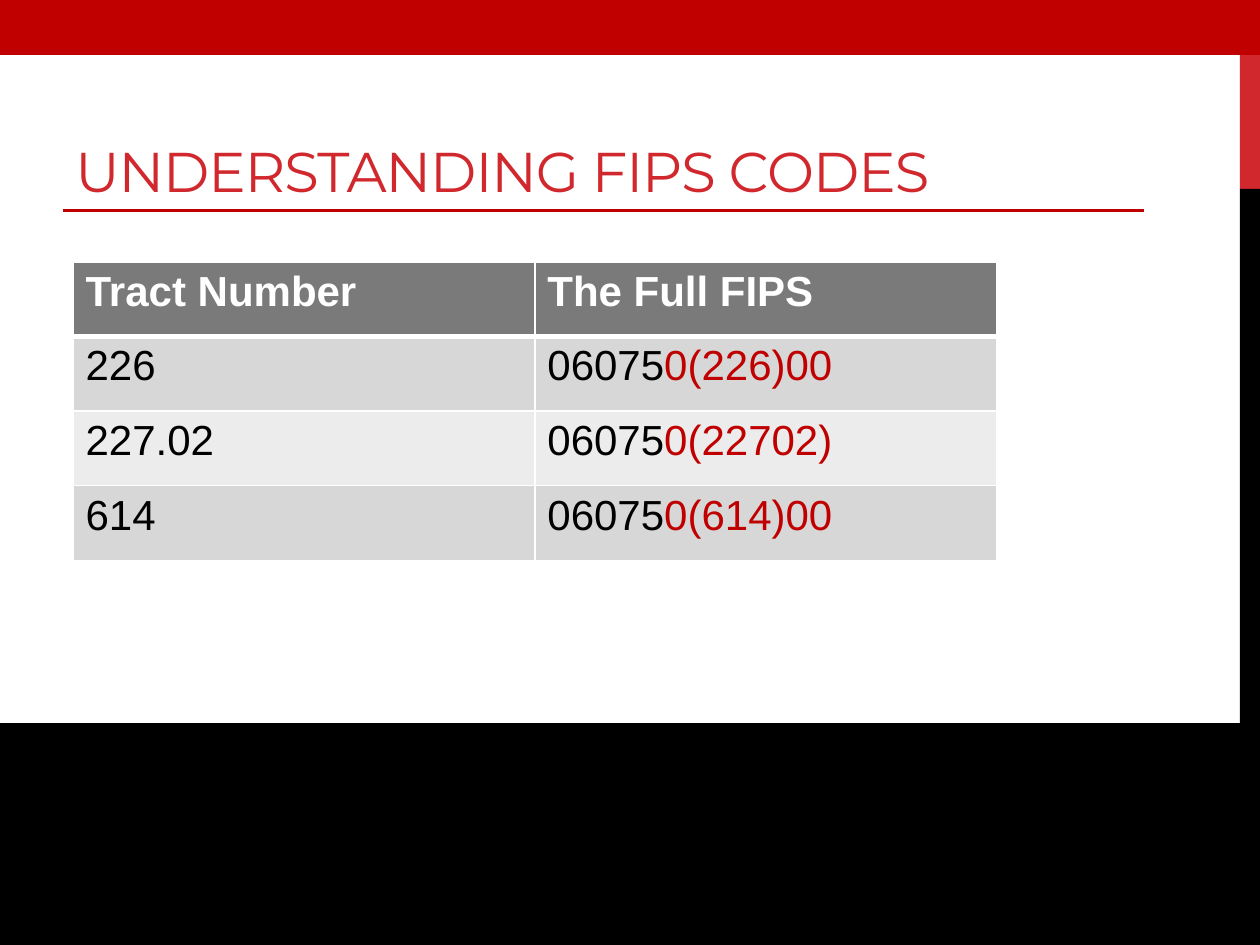
from lxml import etree
from pptx import Presentation
from pptx.dml.color import RGBColor
from pptx.enum.shapes import MSO_CONNECTOR, MSO_SHAPE
from pptx.enum.text import MSO_ANCHOR
from pptx.oxml.ns import qn
from pptx.util import Inches, Pt

RECTANGLE = MSO_SHAPE.RECTANGLE
STRAIGHT = MSO_CONNECTOR.STRAIGHT
BOTTOM = MSO_ANCHOR.BOTTOM

WHITE, BLACK, RED, DARK_RED = "FFFFFF", "000000", "D1282E", "C00000"
HEADER_GRAY, BAND_DARK, BAND_LIGHT = "7A7A7A", "D7D7D7", "ECECEC"


def color(hex_string):
    return RGBColor.from_string(hex_string)


def add_run(paragraph, text, font_name, size, hex_string, bold=False):
    run = paragraph.add_run()
    run.text = text
    run.font.name = font_name
    run.font.size = Pt(size)
    run.font.bold = bold
    run.font.color.rgb = color(hex_string)
    return run


presentation = Presentation()
WIDTH, HEIGHT = 10, 7.5
presentation.slide_width = Inches(WIDTH)
presentation.slide_height = Inches(HEIGHT)
slide = presentation.slides.add_slide(presentation.slide_layouts[6])

# Side strips, bottom panel and top band: left, top, width, height, fill, outline
STRIP = 0.16
strip_left, strip_split, panel_top = WIDTH - STRIP, HEIGHT / 5, 5.75
bars = [
    (strip_left, 0, STRIP, strip_split, RED, False),
    (strip_left, strip_split, STRIP, HEIGHT - strip_split, BLACK, False),
    (0, panel_top, WIDTH, HEIGHT - panel_top, BLACK, True),
    (0, 0, WIDTH, 0.42, DARK_RED, True),
]
for left, top, width, height, fill, outlined in bars:
    bar = slide.shapes.add_shape(
        RECTANGLE, Inches(left), Inches(top), Inches(width), Inches(height))
    bar.shadow.inherit = False
    bar.fill.solid()
    bar.fill.fore_color.rgb = color(fill)
    if outlined:
        bar.line.color.rgb = color(fill)
        bar.line.width = Pt(2.25)
    else:
        bar.line.fill.background()

# Title, resting on the rule below it
MARGIN, RULE_TOP, TITLE_HEIGHT = 0.5, 1.67, 1.17
title = slide.shapes.add_textbox(
    Inches(MARGIN), Inches(RULE_TOP - TITLE_HEIGHT), Inches(8.83), Inches(TITLE_HEIGHT))
title.text_frame.word_wrap = True
title.text_frame.vertical_anchor = BOTTOM
title_run = add_run(title.text_frame.paragraphs[0], "UNDERSTANDING FIPS CODES",
                    "Montserrat", 32, RED)
title_run.font._element.set("spc", "-60")

# Table: each cell is a list of (text, color) runs
rows = [
    [[("Tract Number", WHITE)], [("The Full FIPS", WHITE)]],
    [[("226", BLACK)], [("06075", BLACK), ("0(226)00", DARK_RED)]],
    [[("227.02", BLACK)], [("06075", BLACK), ("0(22702)", DARK_RED)]],
    [[("614", BLACK)], [("06075", BLACK), ("0(614)00", DARK_RED)]],
]
fills = [HEADER_GRAY, BAND_DARK, BAND_LIGHT, BAND_DARK]
COLUMN_WIDTH, ROW_HEIGHT = 3.665, 0.592
table = slide.shapes.add_table(
    len(rows), 2, Inches(0.58), Inches(2.08),
    Inches(2 * COLUMN_WIDTH), Inches(len(rows) * ROW_HEIGHT)).table

for row_index, (row, fill) in enumerate(zip(rows, fills)):
    # The line under the header is heavier than the rest
    border_widths = {
        "a:lnL": 1,
        "a:lnR": 1,
        "a:lnT": 3 if row_index == 1 else 1,
        "a:lnB": 3 if row_index == 0 else 1,
    }
    for column_index, runs in enumerate(row):
        cell = table.cell(row_index, column_index)
        paragraph = cell.text_frame.paragraphs[0]
        for text, text_color in runs:
            add_run(paragraph, text, "Arial", 24, text_color, bold=row_index == 0)

        # Borders come before the fill in the cell properties
        properties = cell._tc.get_or_add_tcPr()
        for tag, width in border_widths.items():
            border = etree.SubElement(properties, qn(tag), w=str(Pt(width)))
            border_fill = etree.SubElement(border, qn("a:solidFill"))
            etree.SubElement(border_fill, qn("a:srgbClr"), val=WHITE)
        cell.fill.solid()
        cell.fill.fore_color.rgb = color(fill)

# Rule under the title
rule = slide.shapes.add_connector(
    STRAIGHT, Inches(MARGIN), Inches(RULE_TOP), Inches(9.08), Inches(RULE_TOP))
rule.line.color.rgb = color(DARK_RED)
rule.line.width = Pt(1.5)
etree.SubElement(rule._element.spPr, qn("a:effectLst"))

presentation.save("out.pptx")
